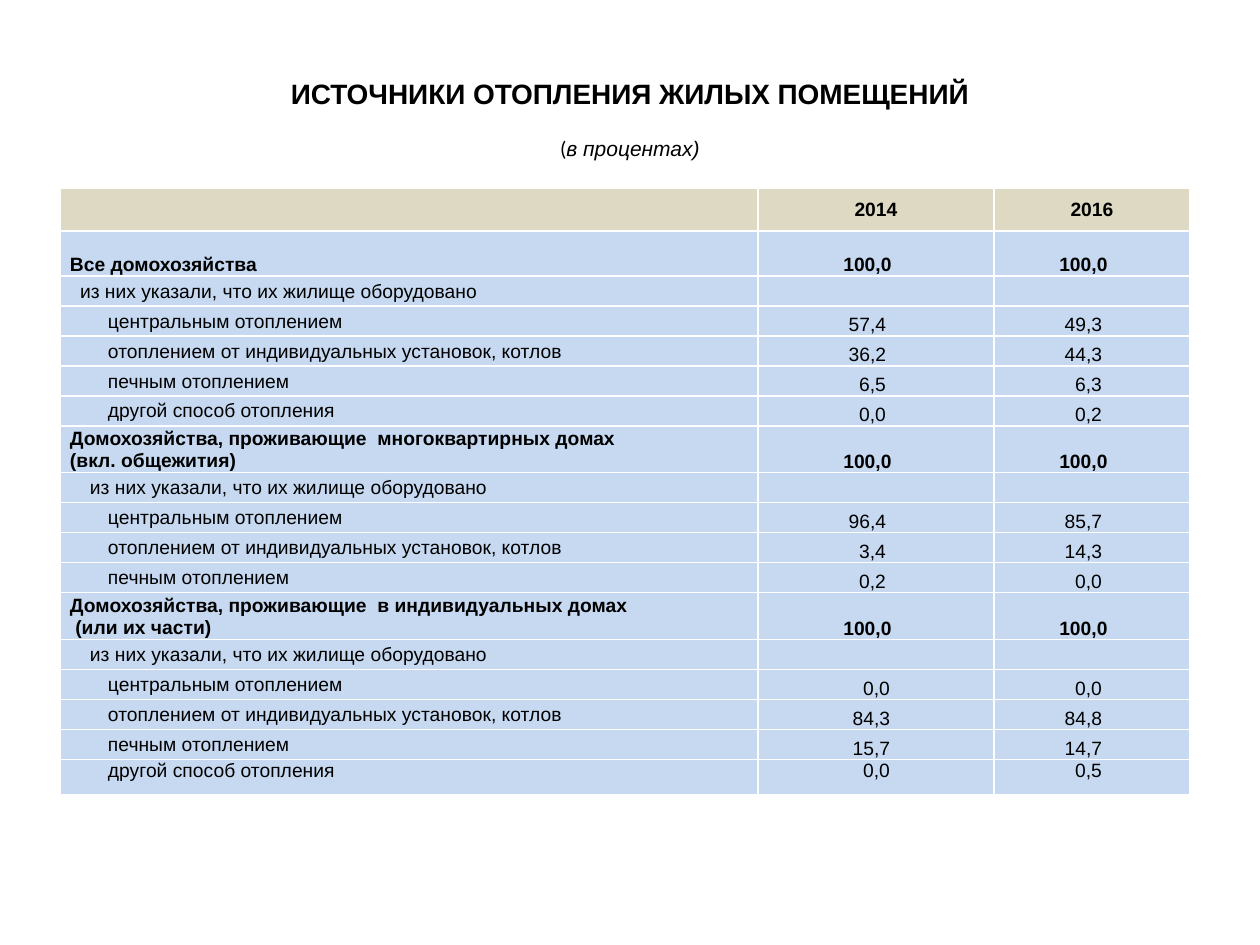
from lxml import etree
from pptx import Presentation
from pptx.dml.color import RGBColor
from pptx.enum.text import MSO_ANCHOR, MSO_AUTO_SIZE, PP_ALIGN
from pptx.oxml.ns import qn
from pptx.util import Pt

TOP, MID, LOW = MSO_ANCHOR.TOP, MSO_ANCHOR.MIDDLE, MSO_ANCHOR.BOTTOM
LEFT, CENTER = PP_ALIGN.LEFT, PP_ALIGN.CENTER
FIXED = MSO_AUTO_SIZE.NONE
BLACK = RGBColor(0x00, 0x00, 0x00)
WHITE = RGBColor(0xFF, 0xFF, 0xFF)
SAND = RGBColor(0xDD, 0xD9, 0xC3)
SKY = RGBColor(0xC6, 0xD9, 0xF1)

TITLE = "ИСТОЧНИКИ ОТОПЛЕНИЯ ЖИЛЫХ ПОМЕЩЕНИЙ"
UNITS = [("(", "Calibri", False), ("в процентах)", "Arial", True)]
YEARS = ["", "2014", "2016"]
NOTE = "из них указали, что их жилище оборудовано"
CENTRAL = "центральным отоплением"
BOILER = "отоплением от индивидуальных установок, котлов"
STOVE = "печным отоплением"
OTHER = "другой способ отопления"
GROUPS = [
    {"head": "Все домохозяйства", "high": 45, "anchor": LOW,
     "indent": 20, "nudge": 0, "rows": [
         (CENTRAL, "57,4", "49,3"), (BOILER, "36,2", "44,3"),
         (STOVE, "6,5", "6,3"), (OTHER, "0,0", "0,2")]},
    {"head": "Домохозяйства, проживающие  многоквартирных домах\n(вкл. общежития)",
     "high": 47, "anchor": MID, "indent": 30, "nudge": 0, "rows": [
         (CENTRAL, "96,4", "85,7"), (BOILER, "3,4", "14,3"),
         (STOVE, "0,2", "0,0")]},
    {"head": "Домохозяйства, проживающие  в индивидуальных домах\n (или их части)",
     "high": 47, "anchor": MID, "indent": 30, "nudge": 8, "rows": [
         (CENTRAL, "0,0", "0,0"), (BOILER, "84,3", "84,8"),
         (STOVE, "15,7", "14,7"), (OTHER, "0,0", "0,5")]},
]
COLS = [698, 236, 196]
HEAD, ROW, LAST = 43, 30, 35
EDGES = ("a:lnL", "a:lnR", "a:lnT", "a:lnB")


def px(n):
    return n * 914400 // 126


def style(font, **extra):
    font.color.rgb = BLACK
    for key, val in {"name": "Arial", "size": Pt(11), "bold": False, **extra}.items():
        setattr(font, key, val)


def border(cell):
    props = cell._tc.get_or_add_tcPr()
    for spot, edge in enumerate(EDGES):
        line = etree.Element(qn(edge), w=str(Pt(1)))
        fill = etree.SubElement(line, qn("a:solidFill"))
        etree.SubElement(fill, qn("a:srgbClr"), val=str(WHITE))
        props.insert(spot, line)


def write(cell, text, fill, anchor, align, left, right, bold):
    cell.fill.solid()
    cell.fill.fore_color.rgb = fill
    border(cell)
    form = {"vertical_anchor": anchor, "margin_left": px(left),
            "margin_right": px(right), "margin_top": px(1), "margin_bottom": 0}
    for key, val in form.items():
        setattr(cell, key, val)
    cell.text_frame.text = text
    for para in cell.text_frame.paragraphs:
        para.alignment = align
        for run in para.runs:
            style(run.font, bold=bold)
        if not text:
            para._p.get_or_add_endParaRPr().set("sz", "1100")


def plan():
    for group in GROUPS:
        nudge = group["nudge"]
        yield (group["head"], "100,0", "100,0"), group["high"], group["anchor"], 10, True, 0
        yield (NOTE, "", ""), ROW, MID, group["indent"], False, 0
        for row in group["rows"]:
            yield row, ROW, MID, 48, False, nudge


def main():
    deck = Presentation()
    deck.slide_width, deck.slide_height = px(1260), px(945)
    slide = deck.slides.add_slide(deck.slide_layouts[5])

    title = slide.shapes.title
    units = slide.shapes.add_textbox(0, px(129), px(1260), px(38))
    for key, val in {"left": 0, "top": px(70), "width": px(1260), "height": px(47)}.items():
        setattr(title, key, val)
    for box in (title, units):
        frame = box.text_frame
        frame.word_wrap, frame.auto_size = True, FIXED
        frame.vertical_anchor = TOP
        frame.paragraphs[0].alignment = CENTER
    title.text_frame.text = TITLE
    style(title.text_frame.paragraphs[0].runs[0].font, size=Pt(16), bold=True)
    for text, name, slant in UNITS:
        run = units.text_frame.paragraphs[0].add_run()
        run.text = text
        style(run.font, name=name, size=Pt(12), italic=slant)

    lines = list(plan())
    highs = [HEAD] + [line[1] for line in lines[:-1]] + [LAST]
    grid = slide.shapes.add_table(len(highs), len(COLS), px(60), px(188),
                                  px(sum(COLS)), px(sum(highs))).table
    grid.first_row = grid.horz_banding = False
    for col, wide in zip(grid.columns, COLS):
        col.width = px(wide)
    for row, high in zip(grid.rows, highs):
        row.height = px(high)

    for c, year in enumerate(YEARS):
        write(grid.cell(0, c), year, SAND, MID, CENTER, 1, 1, True)
    for r, (texts, high, anchor, indent, bold, nudge) in enumerate(lines, 1):
        last = r == len(lines)
        write(grid.cell(r, 0), texts[0], SKY, TOP if last else anchor, LEFT, indent, 1, bold)
        for c, text in enumerate(texts[1:], 1):
            pad = 27 + (10 if len(text) == 3 else 0) + (nudge if c == 1 else 0)
            write(grid.cell(r, c), text, SKY, TOP if last else LOW, CENTER, pad, 44, bold)

    deck.save("out.pptx")


if __name__ == "__main__":
    main()
